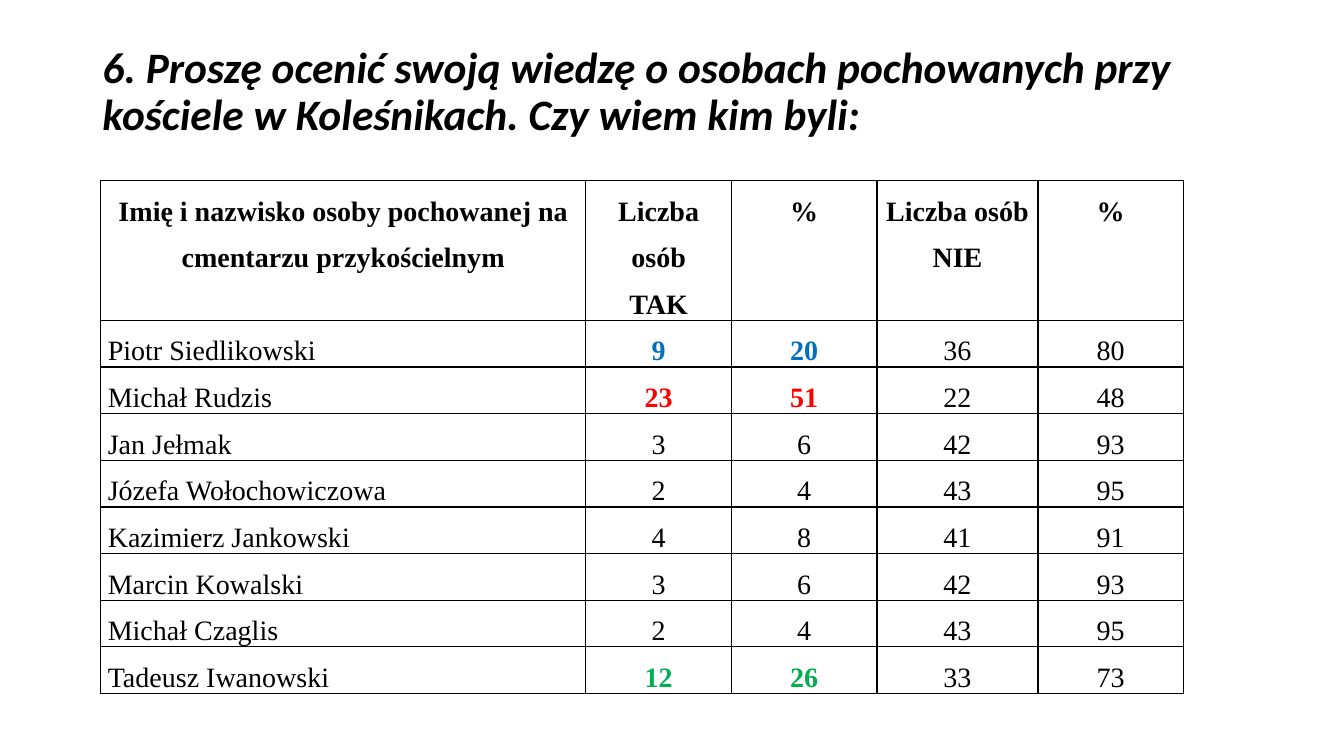
from lxml.etree import SubElement
from pptx import Presentation
from pptx.dml.color import RGBColor
from pptx.enum.text import MSO_ANCHOR, PP_ALIGN
from pptx.oxml.ns import qn
from pptx.util import Pt

BLACK = RGBColor(0x00, 0x00, 0x00)
BLUE = RGBColor(0x00, 0x70, 0xC0)
RED = RGBColor(0xFF, 0x00, 0x00)
GREEN = RGBColor(0x00, 0xB0, 0x50)


def write(tf, text, size=20, font="Times New Roman", color=BLACK, bold=False,
          italic=False, align=PP_ALIGN.CENTER, spacing=1.5):
    """Fill a text frame, one paragraph for each line of text."""
    tf.text = text
    for p in tf.paragraphs:
        p.alignment = align
        p.line_spacing = spacing
        p.space_before = p.space_after = Pt(0)
        for r in p.runs:
            r.font.size = Pt(size)
            r.font.name = font
            r.font.color.rgb = color
            r.font.bold = bold
            r.font.italic = italic


def add_borders(cell):
    """Draw a thin black line on all four sides of a cell."""
    tcPr = cell._tc.get_or_add_tcPr()
    for i, side in enumerate(("lnL", "lnR", "lnT", "lnB")):
        ln = SubElement(tcPr, qn(f"a:{side}"), w=str(Pt(1)))
        fill = SubElement(ln, qn("a:solidFill"))
        SubElement(fill, qn("a:srgbClr"), val=str(BLACK))
        tcPr.insert(i, ln)


prs = Presentation()
prs.slide_width = Pt(960)
prs.slide_height = Pt(540)
s = prs.slides.add_slide(prs.slide_layouts[5])

# Title
title = s.shapes.title
title.left, title.top, title.width, title.height = Pt(66), Pt(29), Pt(828), Pt(108)
tf = title.text_frame
tf.word_wrap = True
tf.vertical_anchor = MSO_ANCHOR.TOP
write(tf, "6. Proszę ocenić swoją wiedzę o osobach pochowanych przy kościele "
      "w Koleśnikach. Czy wiem kim byli:", size=31, font="Calibri", bold=True,
      italic=True, align=PP_ALIGN.LEFT, spacing=0.9)

# Survey answers
rows = [
    ("Imię i nazwisko osoby pochowanej na cmentarzu przykościelnym",
     "Liczba osób\nTAK", "%", "Liczba osób\nNIE", "%"),
    ("Piotr Siedlikowski", 9, 20, 36, 80),
    ("Michał Rudzis", 23, 51, 22, 48),
    ("Jan Jełmak", 3, 6, 42, 93),
    ("Józefa Wołochowiczowa", 2, 4, 43, 95),
    ("Kazimierz Jankowski", 4, 8, 41, 91),
    ("Marcin Kowalski", 3, 6, 42, 93),
    ("Michał Czaglis", 2, 4, 43, 95),
    ("Tadeusz Iwanowski", 12, 26, 33, 73),
]
highlights = {1: BLUE, 2: RED, 8: GREEN}
col_widths = [346.5, 104, 104, 115, 104]

# Table
frame = s.shapes.add_table(len(rows), len(col_widths), Pt(72), Pt(129),
                           Pt(sum(col_widths)), Pt(361.4))
table = frame.table
table.first_row = False
table.horz_banding = False
for column, width in zip(table.columns, col_widths):
    column.width = Pt(width)

for i, row in enumerate(rows):
    table.rows[i].height = Pt(95 if i == 0 else 33.3)
    for j, value in enumerate(row):
        cell = table.cell(i, j)
        cell.margin_left = cell.margin_right = Pt(5)
        cell.margin_top = cell.margin_bottom = Pt(0)
        cell.fill.background()
        add_borders(cell)
        marked = i in highlights and j in (1, 2)
        write(cell.text_frame, str(value),
              color=highlights[i] if marked else BLACK,
              bold=i == 0 or marked,
              align=PP_ALIGN.LEFT if i > 0 and j == 0 else PP_ALIGN.CENTER)

prs.save("out.pptx")
